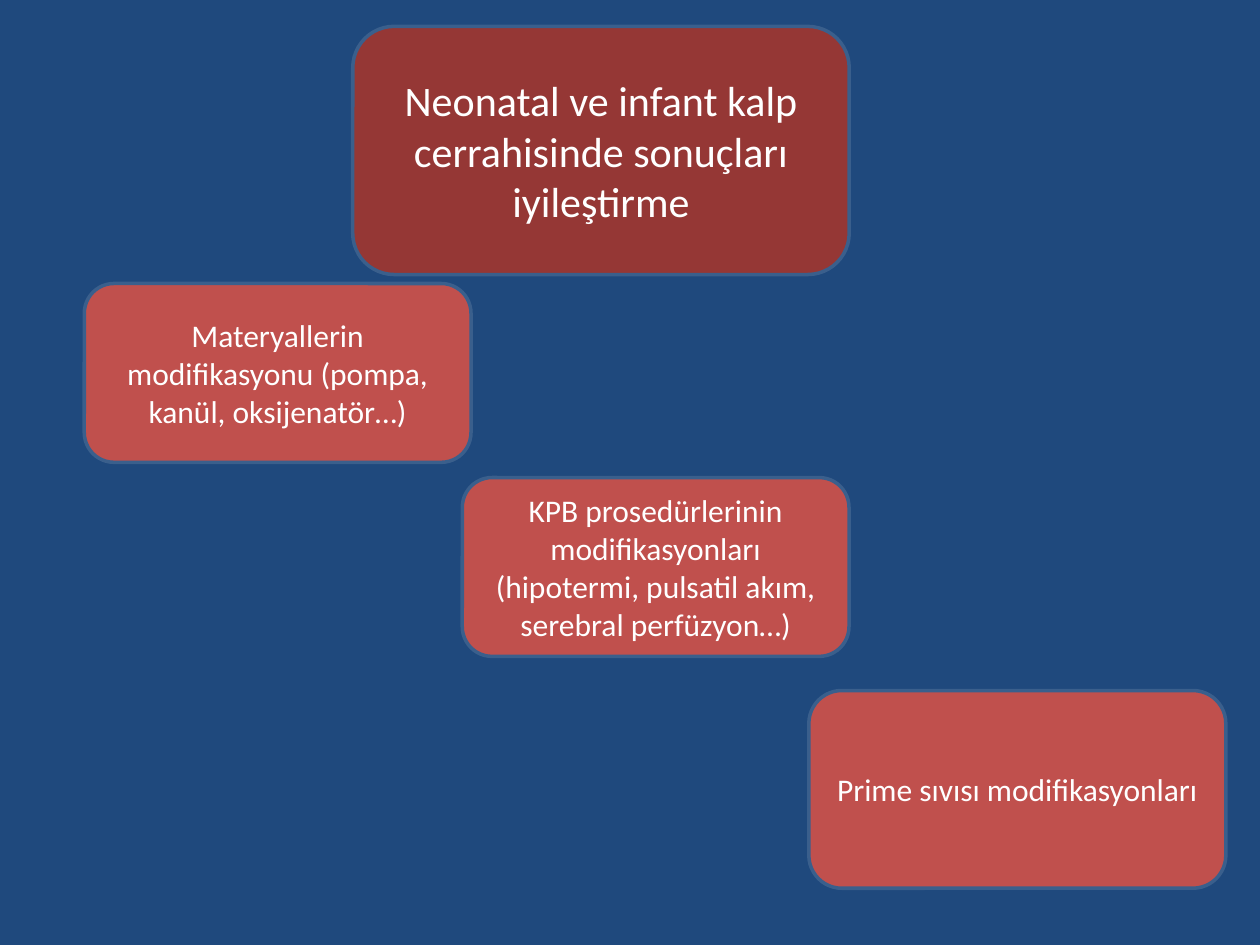
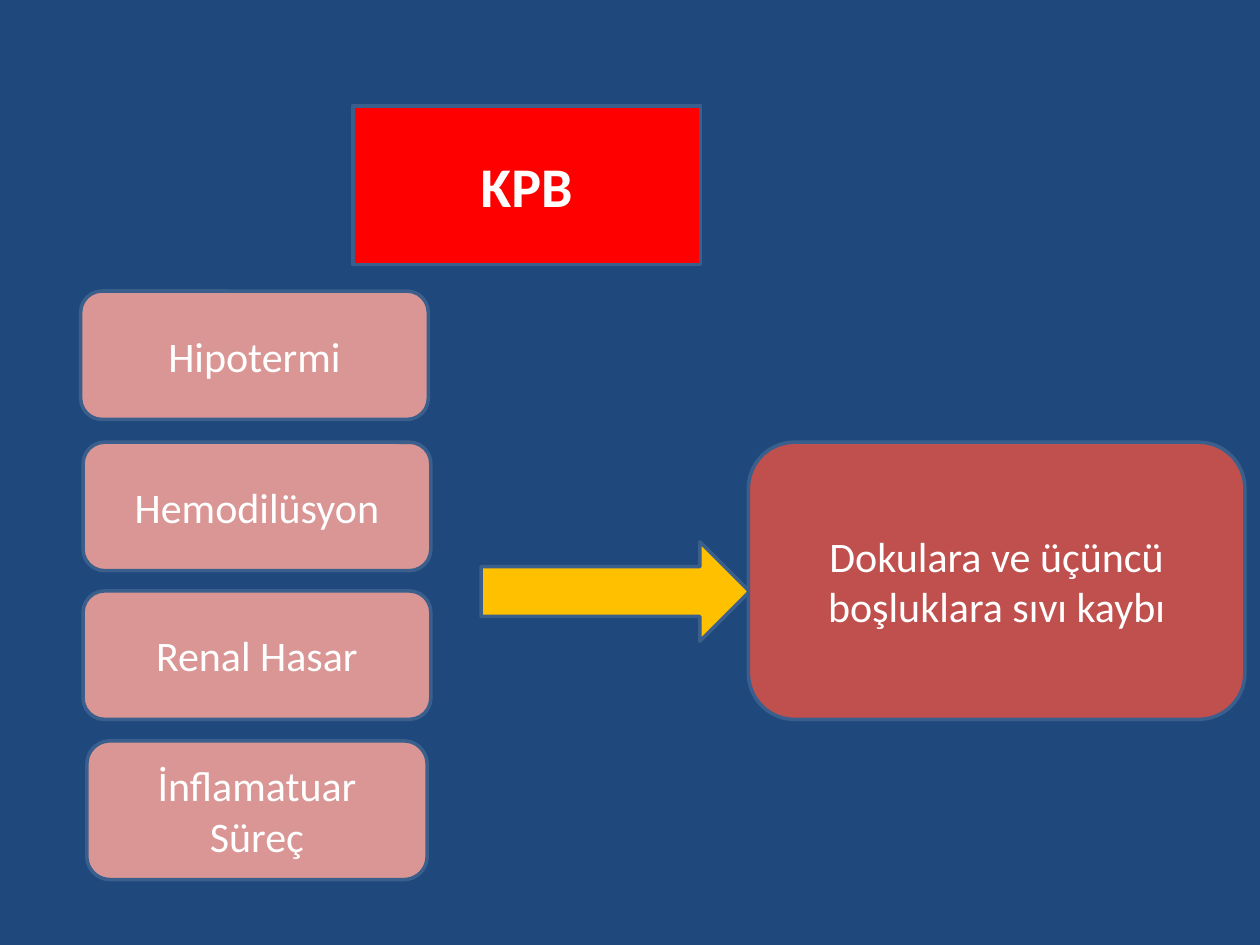
from pptx import Presentation
from pptx import util as u
from pptx.dml.color import RGBColor
from pptx.enum import shapes, text

COLORS = {
    "background": "1F497D",
    "outline": "3A5F8C",
    "text": "FFFFFF",
    "goal": "953735",
    "box": "C0504D",
    "factor": "D99694",
    "bypass": "FF0000",
    "arrow": "FFC000",
}
FONT = "Calibri"
ROUNDED = shapes.MSO_SHAPE.ROUNDED_RECTANGLE


def color(name):
    """Return the palette colour with this name."""
    return RGBColor.from_string(COLORS[name])


def add_slide(presentation):
    """Add a blank slide with the shared background."""
    slide = presentation.slides.add_slide(presentation.slide_layouts[6])
    slide.background.fill.solid()
    slide.background.fill.fore_color.rgb = color("background")
    return slide


def add_shape(slide, kind, place, fill):
    """Add a filled, outlined shape at (left, top, width, height) in points."""
    shape = slide.shapes.add_shape(kind, *map(u.Pt, place))
    shape.shadow.inherit = False
    shape.fill.solid()
    shape.fill.fore_color.rgb = color(fill)
    shape.line.color.rgb = color("outline")
    shape.line.width = u.Pt(2)
    return shape


def write_text(shape, words, size=24, bold=False):
    """Write centred text into a shape."""
    frame = shape.text_frame
    frame.word_wrap = True
    frame.vertical_anchor = text.MSO_ANCHOR.MIDDLE
    paragraph = frame.paragraphs[0]
    paragraph.alignment = text.PP_ALIGN.CENTER
    run = paragraph.add_run()
    run.text = words
    run.font.name = FONT
    run.font.size = u.Pt(size)
    run.font.bold = bold
    run.font.color.rgb = color("text")


def add_box(slide, words, place, fill="box", kind=ROUNDED, **text_format):
    """Add a shape that holds centred text."""
    write_text(add_shape(slide, kind, place, fill), words, **text_format)


def build_improvement_slide(presentation):
    """Show the goal and the three steps that lead down from it."""
    slide = add_slide(presentation)
    add_box(slide, "Neonatal ve infant kalp cerrahisinde sonuçları iyileştirme",
            (201.6, 15.1, 283.7, 141.8), fill="goal")
    steps = [
        ("Materyallerin modifikasyonu (pompa, kanül, oksijenatör…)",
         (48.2, 162, 221, 102.2)),
        ("KPB prosedürlerinin modifikasyonları "
         "(hipotermi, pulsatil akım, serebral perfüzyon…)",
         (264.2, 272.9, 221, 102.2)),
        ("Prime sıvısı modifikasyonları", (462.2, 394.6, 238.3, 113)),
    ]
    for words, place in steps:
        add_box(slide, words, place, size=18)


def build_bypass_slide(presentation):
    """Show the effects of bypass and the fluid loss they cause."""
    slide = add_slide(presentation)
    add_box(slide, "KPB", (201.6, 60.5, 198.7, 90.7), fill="bypass",
            kind=shapes.MSO_SHAPE.RECTANGLE, size=32, bold=True)
    factors = [
        ("Hipotermi", (46.1, 166.3, 198.7, 73.4)),
        ("Hemodilüsyon", (47.5, 252.7, 198.7, 73.4)),
        ("Renal Hasar", (47.5, 337.7, 198.7, 73.4)),
        ("İnflamatuar Süreç", (49.7, 423.4, 194.4, 79.2)),
    ]
    for words, place in factors:
        add_box(slide, words, place, fill="factor")
    add_shape(slide, shapes.MSO_SHAPE.RIGHT_ARROW,
              (275, 309.6, 153.4, 56.9), "arrow")
    add_box(slide, "Dokulara ve üçüncü boşluklara sıvı kaybı",
            (427.7, 252.7, 283.7, 158.4))


def main():
    """Build and save the presentation."""
    presentation = Presentation()
    presentation.slide_width = u.Pt(720)
    presentation.slide_height = u.Pt(540)
    build_improvement_slide(presentation)
    build_bypass_slide(presentation)
    presentation.save("out.pptx")


if __name__ == "__main__":
    main()
